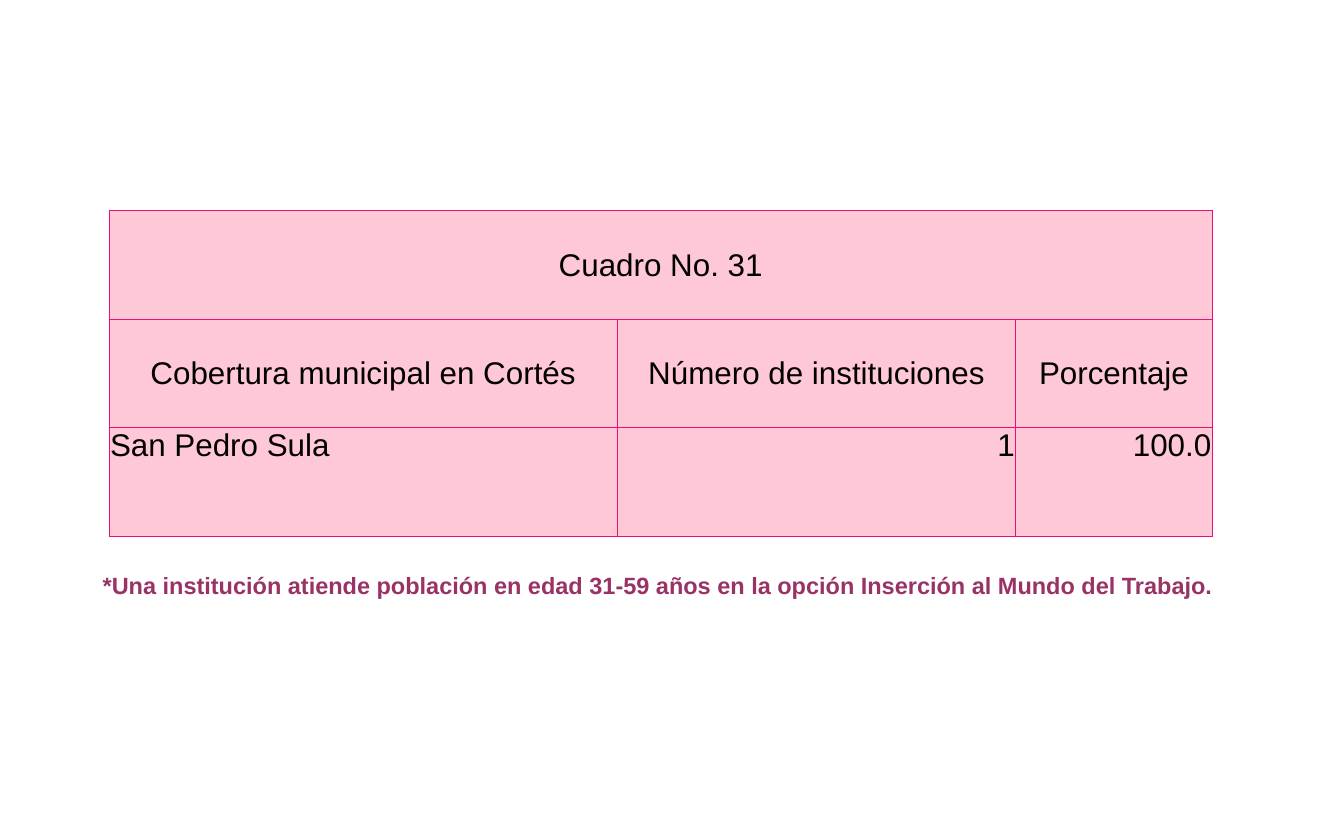
import pptx
import pptx.util
import pptx.dml.color
import pptx.enum.text
import pptx.oxml
import pptx.oxml.ns

Inches = pptx.util.Inches
Pt = pptx.util.Pt
ALIGN = pptx.enum.text.PP_ALIGN
ANCHOR = pptx.enum.text.MSO_ANCHOR

PINK = "FFC8D6"
ROSE = "EA0F77"
PLUM = "993366"
BLACK = "000000"

WIDTHS = [5.4, 4.24, 2.09]
ROWS = [
    ["Cuadro No. 31", "", ""],
    ["Cobertura municipal en Cortés", "Número de instituciones", "Porcentaje"],
    ["San Pedro Sula", "1", "100.0"],
]
NOTE = "*Una institución atiende población en edad 31-59 años en la opción Inserción al Mundo del Trabajo. "


def color(code):
    return pptx.dml.color.RGBColor.from_string(code)


def write(para, text, size, code, align, bold=False):
    para.text = text
    para.alignment = align
    font = para.font
    for run in para.runs:
        font = run.font
    font.name = "Arial"
    font.size = Pt(size)
    font.bold = bold
    font.color.rgb = color(code)


def border(cell):
    props = cell._tc.get_or_add_tcPr()
    for place, side in enumerate(["lnL", "lnR", "lnT", "lnB"]):
        line = pptx.oxml.parse_xml(
            f'<a:{side} {pptx.oxml.ns.nsdecls("a")} w="{Pt(0.75)}">'
            f'<a:solidFill><a:srgbClr val="{ROSE}"/></a:solidFill></a:{side}>'
        )
        props.insert(place, line)


def style(cell, text, head, first):
    cell.margin_left = cell.margin_right = cell.margin_top = Inches(0.01)
    cell.margin_bottom = 0
    cell.vertical_anchor = ANCHOR.MIDDLE if head else ANCHOR.TOP
    cell.fill.solid()
    cell.fill.fore_color.rgb = color(PINK)
    border(cell)
    align = ALIGN.CENTER if head else ALIGN.LEFT if first else ALIGN.RIGHT
    write(cell.text_frame.paragraphs[0], text, 24, BLACK, align)


def add_grid(slide, left, top, width, height):
    frame = slide.shapes.add_table(
        len(ROWS), len(WIDTHS), Inches(left), Inches(top), Inches(width), Inches(height)
    )
    table = frame.table
    table.horz_banding = False
    table.first_row = False
    for column, size in zip(table.columns, WIDTHS):
        column.width = Inches(size)
    for r, row in enumerate(ROWS):
        table.rows[r].height = Inches(height / len(ROWS))
        for c, text in enumerate(row):
            style(table.cell(r, c), text, r < 2, c == 0)
    table.cell(0, 0).merge(table.cell(0, len(WIDTHS) - 1))


def add_note(slide, left, top, width, height):
    box = slide.shapes.add_textbox(Inches(left), Inches(top), Inches(width), Inches(height))
    frame = box.text_frame
    frame.word_wrap = True
    frame.auto_size = pptx.enum.text.MSO_AUTO_SIZE.SHAPE_TO_FIT_TEXT
    write(frame.paragraphs[0], NOTE, 18, PLUM, ALIGN.CENTER, True)


def main():
    deck = pptx.Presentation()
    deck.slide_width = Inches(14.29)
    deck.slide_height = Inches(8.9)
    slide = deck.slides.add_slide(deck.slide_layouts[6])
    add_grid(slide, 1.16, 2.24, sum(WIDTHS), 3.46)
    add_note(slide, 0.98, 6.02, 12.1, 0.4)
    deck.save("out.pptx")


if __name__ == "__main__":
    main()
